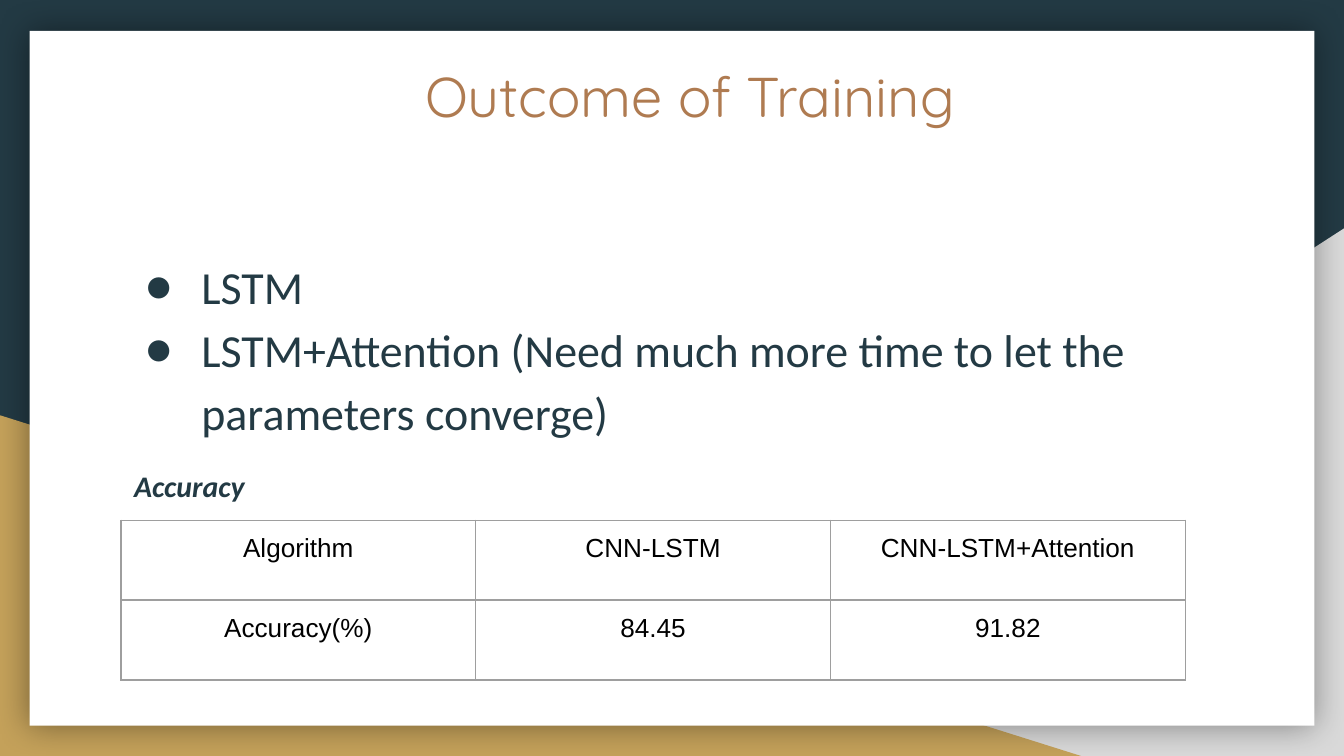
import pptx
import pptx.dml.color
import pptx.enum.shapes
import pptx.enum.text
import pptx.oxml
import pptx.oxml.ns
import pptx.util
from pptx.util import Inches

COLORS = {
    "navy": "233A44",
    "grey": "D9D9D9",
    "gold": "C4A15A",
    "white": "FFFFFF",
    "copper": "AF7B51",
    "black": "000000",
    "border": "9E9E9E",
}
NS = pptx.oxml.ns.nsdecls("a")
SHAPES = pptx.enum.shapes.MSO_SHAPE
ALIGN = pptx.enum.text.PP_ALIGN


def rgb(name):
    return pptx.dml.color.RGBColor.from_string(COLORS[name])


def color_xml(name):
    return f'<a:srgbClr val="{COLORS[name]}"/>'


def write(paragraph, text, font="Calibri", size=24.6, color="navy", bold=False,
          italic=False, align=ALIGN.LEFT, spacing=1.0, before=0, bullet=None):
    paragraph.alignment = align
    paragraph.line_spacing = spacing
    paragraph.space_before = pptx.util.Pt(before)
    run = paragraph.add_run()
    run.text = text
    run.font.name = font
    run.font.size = pptx.util.Pt(size)
    run.font.color.rgb = rgb(color)
    run.font.bold = bold
    run.font.italic = italic
    if bullet:
        properties = paragraph._p.get_or_add_pPr()
        properties.set("marL", str(Inches(0.5)))
        properties.set("indent", str(Inches(-0.42)))
        for xml in (f"<a:buClr {NS}>{color_xml(color)}</a:buClr>",
                    f'<a:buFont {NS} typeface="{font}"/>',
                    f'<a:buChar {NS} char="{bullet}"/>'):
            properties.append(pptx.oxml.parse_xml(xml))


class SlideBuilder:
    margin = Inches(0.1)

    def __init__(self, presentation):
        self.slide = presentation.slides.add_slide(presentation.slide_layouts[5])
        background = self.slide.background.fill
        background.solid()
        background.fore_color.rgb = rgb("navy")

    def set_margins(self, target):
        target.margin_left = target.margin_right = self.margin
        target.margin_top = target.margin_bottom = self.margin

    def prepare_frame(self, frame):
        self.set_margins(frame)
        frame.word_wrap = True
        frame.auto_size = pptx.enum.text.MSO_AUTO_SIZE.NONE
        frame.vertical_anchor = pptx.enum.text.MSO_ANCHOR.TOP

    def panel(self, kind, left, top, width, height, color, flip=False, shadow=False):
        panel = self.slide.shapes.add_shape(
            kind, Inches(left), Inches(top), Inches(width), Inches(height))
        panel.shadow.inherit = False
        panel.fill.solid()
        panel.fill.fore_color.rgb = rgb(color)
        panel.line.fill.background()
        properties = panel._element.spPr
        if flip:
            properties.find(pptx.oxml.ns.qn("a:xfrm")).set("flipH", "1")
        if shadow:
            effects = properties.find(pptx.oxml.ns.qn("a:effectLst"))
            effects.append(pptx.oxml.parse_xml(
                f'<a:outerShdw {NS} blurRad="{pptx.util.Pt(18)}" dist="0" dir="0" '
                f'algn="ctr" rotWithShape="0"><a:srgbClr val="{COLORS["black"]}">'
                '<a:alpha val="40000"/></a:srgbClr></a:outerShdw>'))

    def title(self, text, left, top, width, height):
        title = self.slide.shapes.title
        title.left, title.top = Inches(left), Inches(top)
        title.width, title.height = Inches(width), Inches(height)
        self.slide.shapes._spTree.append(title._element)
        self.prepare_frame(title.text_frame)
        write(title.text_frame.paragraphs[0], text, font="Quicksand", size=30,
              color="copper", align=ALIGN.CENTER)

    def body(self, entries, left, top, width, height):
        body = self.slide.shapes.add_textbox(
            Inches(left), Inches(top), Inches(width), Inches(height))
        frame = body.text_frame
        self.prepare_frame(frame)
        for index, (text, style) in enumerate(entries):
            paragraph = frame.add_paragraph() if index else frame.paragraphs[0]
            write(paragraph, text, spacing=1.15, **style)

    def border(self, cell):
        properties = cell._tc.get_or_add_tcPr()
        for index, side in enumerate(("lnL", "lnR", "lnT", "lnB")):
            properties.insert(index, pptx.oxml.parse_xml(
                f'<a:{side} {NS} w="{pptx.util.Pt(0.75)}"><a:solidFill>'
                f'{color_xml("border")}</a:solidFill></a:{side}>'))

    def table(self, rows, left, top, width, height):
        table = self.slide.shapes.add_table(
            len(rows), len(rows[0]), Inches(left), Inches(top),
            Inches(width), Inches(height)).table
        table.first_row = False
        table.horz_banding = False
        for row, values in enumerate(rows):
            for column, value in enumerate(values):
                cell = table.cell(row, column)
                self.set_margins(cell)
                cell.fill.background()
                self.border(cell)
                write(cell.text_frame.paragraphs[0], value, font="Arial", size=14,
                      color="black", align=ALIGN.CENTER)


def main():
    presentation = pptx.Presentation()
    presentation.slide_width = Inches(10)
    presentation.slide_height = Inches(10) * 9 // 16
    outcome = SlideBuilder(presentation)
    outcome.panel(SHAPES.RIGHT_TRIANGLE, 3.92, 1.7, 6.08, 3.93, "grey", flip=True)
    outcome.panel(SHAPES.RIGHT_TRIANGLE, 0, 3.09, 8.06, 2.54, "gold")
    outcome.panel(SHAPES.RECTANGLE, 0.22, 0.23, 9.56, 5.17, "white", shadow=True)
    outcome.title("Outcome of Training", 1.03, 0.36, 8.21, 0.73)
    outcome.body([
        ("LSTM", {"bullet": "●"}),
        ("LSTM+Attention (Need much more time to let the parameters converge)",
         {"bullet": "●"}),
        ("Accuracy", {"size": 16, "bold": True, "italic": True, "before": 12}),
    ], 0.9, 1.76, 8.21, 2.39)
    outcome.table([
        ("Algorithm", "CNN-LSTM", "CNN-LSTM+Attention"),
        ("Accuracy(%)", "84.45", "91.82"),
    ], 0.9, 3.87, 7.92, 1.19)
    presentation.save("out.pptx")


if __name__ == "__main__":
    main()
